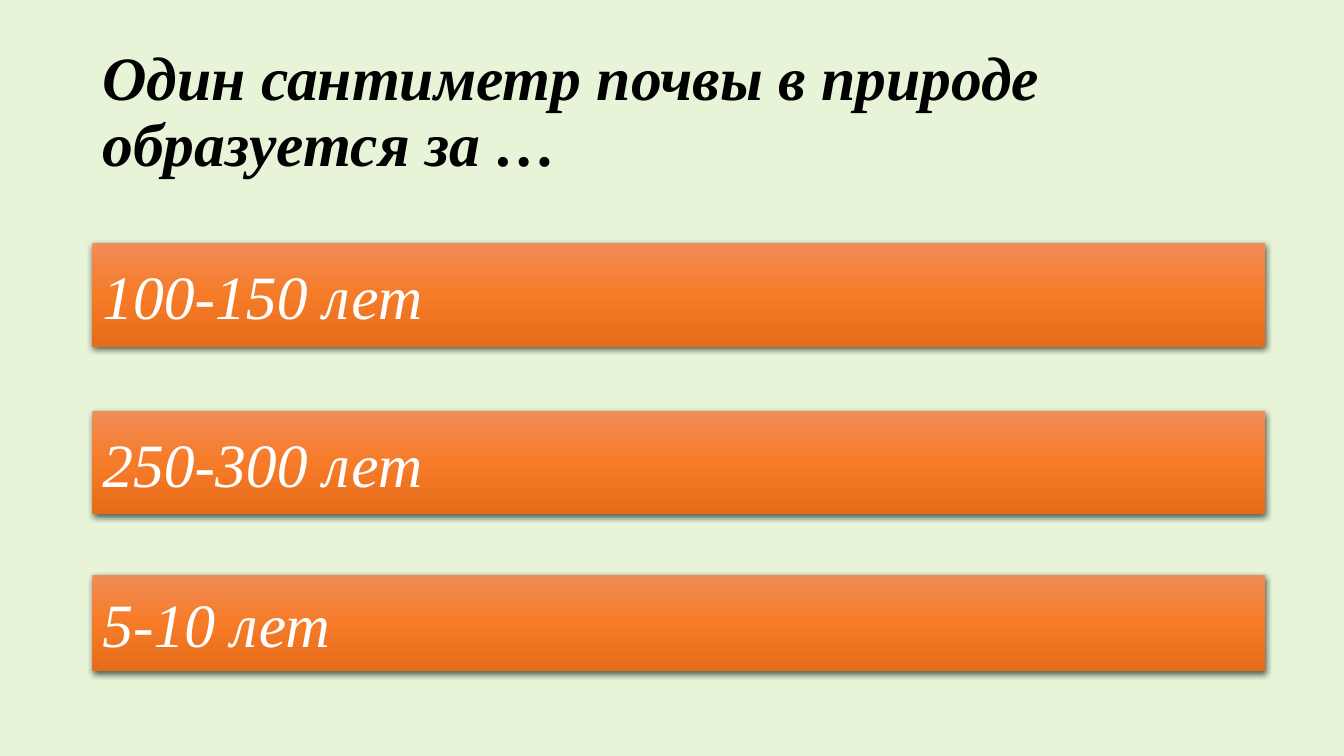
from copy import deepcopy
from dataclasses import dataclass

from lxml import etree
from pptx import Presentation
from pptx.dml.color import RGBColor
from pptx.enum import shapes, text
from pptx.oxml import ns
from pptx.util import Pt


@dataclass(frozen=True)
class Theme:
    background: str = "E7F4D8"
    question: str = "000000"
    answer: str = "FFFFFF"
    shadow: str = "000000"
    gradient: tuple = ((0, "F18C57"), (0.5, "F67B28"), (1, "E56C19"))
    font: str = "Times New Roman"
    size: float = 44


@dataclass(frozen=True)
class Answer:
    wording: str
    top: float
    height: float


THEME = Theme()
LEFT, ANSWER_WIDTH = 66, 837.5
ANSWERS = (
    Answer("100-150 лет", 173.5, 74),
    Answer("250-300 лет", 293.75, 73.5),
    Answer("5-10 лет", 410.5, 68.5),
)


def write(shape, wording: str, color: str, **extra) -> None:
    """Put left-aligned, vertically centred italic text in a shape."""
    frame = shape.text_frame
    frame.text = wording
    frame.word_wrap = True
    frame.vertical_anchor = text.MSO_ANCHOR.MIDDLE
    paragraph = frame.paragraphs[0]
    paragraph.alignment = text.PP_ALIGN.LEFT
    font = paragraph.runs[0].font
    formats = {"name": THEME.font, "size": Pt(THEME.size), "italic": True, **extra}
    for attribute, value in formats.items():
        setattr(font, attribute, value)
    font.color.rgb = RGBColor.from_string(color)


def fill_gradient(shape) -> None:
    """Shade a shape from top to bottom with the theme's three stops."""
    shape.fill.gradient()
    shape.fill.gradient_angle = 270
    stop_list = shape._element.spPr.find(".//" + ns.qn("a:gsLst"))
    stop_list.append(deepcopy(stop_list[-1]))
    for stop, (position, color) in zip(shape.fill.gradient_stops, THEME.gradient):
        stop.position = position
        stop.color.rgb = RGBColor.from_string(color)


def cast_shadow(shape) -> None:
    """Drop a soft shadow straight down."""
    shape.shadow.inherit = False
    effects = shape._element.spPr.find(ns.qn("a:effectLst"))
    shadow = etree.SubElement(
        effects, ns.qn("a:outerShdw"), blurRad=str(Pt(4.5)), dist=str(Pt(1.5)),
        dir="5400000", algn="ctr", rotWithShape="0")
    color = etree.SubElement(shadow, ns.qn("a:srgbClr"), val=THEME.shadow)
    etree.SubElement(color, ns.qn("a:alpha"), val="63000")


def add_answer(slide, answer: Answer) -> None:
    button = slide.shapes.add_shape(
        shapes.MSO_SHAPE.ACTION_BUTTON_CUSTOM,
        Pt(LEFT), Pt(answer.top), Pt(ANSWER_WIDTH), Pt(answer.height))
    fill_gradient(button)
    button.line.fill.background()
    cast_shadow(button)
    write(button, answer.wording, THEME.answer)


def main() -> None:
    deck = Presentation()
    deck.slide_width, deck.slide_height = Pt(960), Pt(540)
    slide = deck.slides.add_slide(deck.slide_layouts[5])
    slide.background.fill.solid()
    slide.background.fill.fore_color.rgb = RGBColor.from_string(THEME.background)

    # Question
    question = slide.shapes.title
    place = {"left": LEFT, "top": 28.75, "width": 828, "height": 104.5}
    for attribute, value in place.items():
        setattr(question, attribute, Pt(value))
    write(question, "Один сантиметр почвы в природе образуется за …",
          THEME.question, bold=True)
    question.text_frame.auto_size = text.MSO_AUTO_SIZE.NONE
    question.text_frame.paragraphs[0].line_spacing = 0.9

    # Answer buttons
    for answer in ANSWERS:
        add_answer(slide, answer)

    deck.save("out.pptx")


if __name__ == "__main__":
    main()
